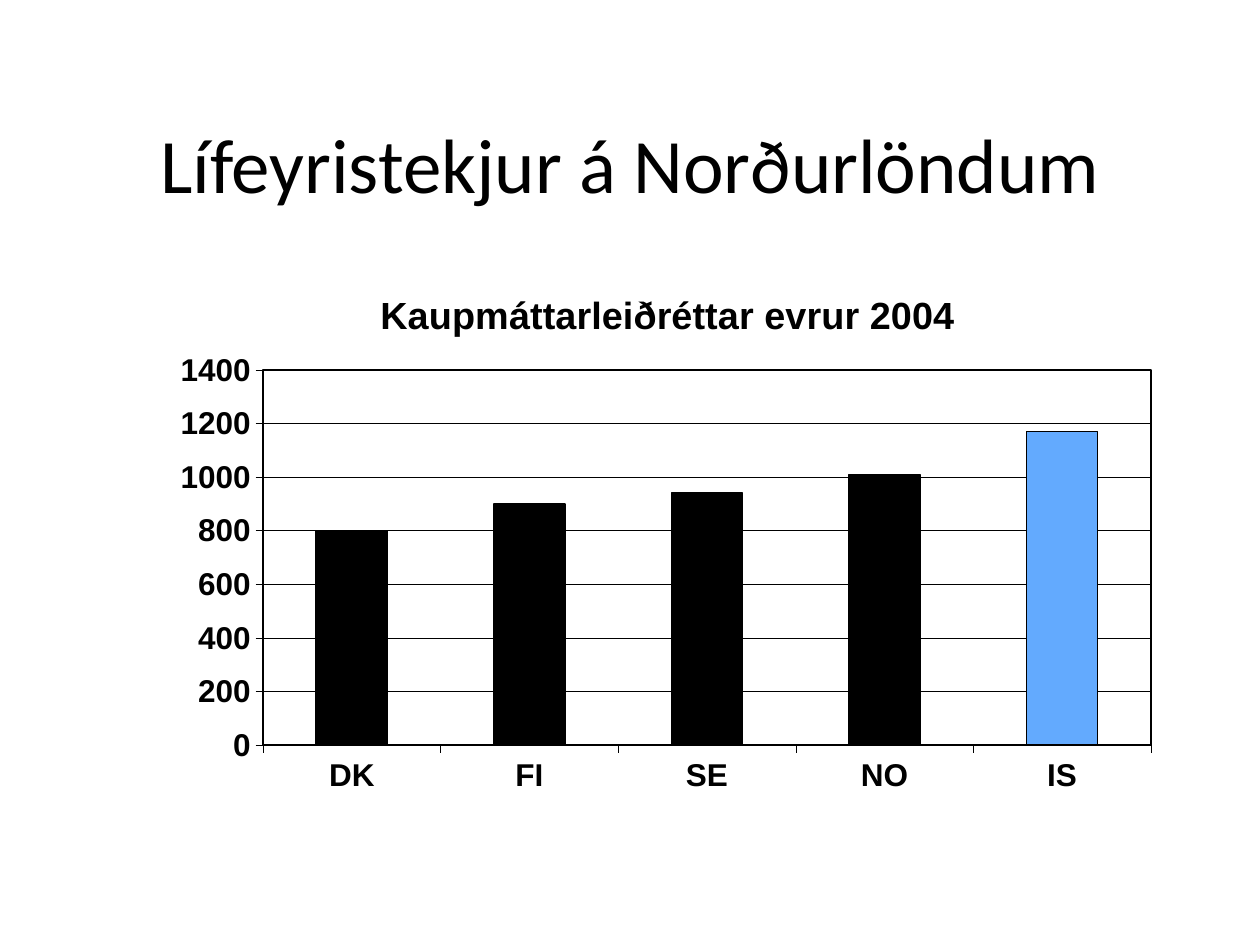
from dataclasses import dataclass

from lxml import etree
from pptx import Presentation
from pptx.chart.data import CategoryChartData
from pptx.dml.color import RGBColor
from pptx.enum.chart import XL_CHART_TYPE, XL_TICK_MARK
from pptx.enum.text import MSO_ANCHOR, PP_ALIGN
from pptx.oxml import parse_xml
from pptx.oxml.ns import nsdecls, qn
from pptx.util import Pt

COLUMN = XL_CHART_TYPE.COLUMN_CLUSTERED
OUTSIDE, NO_TICK = XL_TICK_MARK.OUTSIDE, XL_TICK_MARK.NONE
MIDDLE, CENTER = MSO_ANCHOR.MIDDLE, PP_ALIGN.CENTER
SCALE = 914400 / 126


@dataclass(frozen=True)
class Theme:
    """Colours, fonts and type sizes of the slide."""
    ink: str = "000000"
    highlight: str = "63AAFE"
    title_font: str = "Calibri"
    chart_font: str = "Arial"
    title_size: float = 44
    chart_title_size: float = 21.6
    chart_size: float = 18
    hairline: float = 0.25
    outline: float = 1


THEME = Theme()
HEADING = "Lífeyristekjur á Norðurlöndum"
MEASURE = "Kaupmáttarleiðréttar evrur 2004"
INCOMES = {"DK": 800, "FI": 900, "SE": 940, "NO": 1010, "IS": 1170}


def px(n):
    """Turn pixels into EMU."""
    return round(n * SCALE)


def style_font(font, name, size, bold):
    """Set typeface, size, weight and ink colour."""
    font.name, font.size, font.bold = name, Pt(size), bold
    font.color.rgb = RGBColor.from_string(THEME.ink)


def style_line(line, width):
    """Draw a line in the ink colour."""
    line.color.rgb = RGBColor.from_string(THEME.ink)
    line.width = Pt(width)


def fill_solid(fmt, color):
    """Fill a chart element with one colour."""
    fmt.fill.solid()
    fmt.fill.fore_color.rgb = RGBColor.from_string(color)


def set_layout(parent, inner=False, **places):
    """Place a chart part by fractions of the chart's size."""
    for old in parent.findall(qn("c:layout")):
        parent.remove(old)
    layout = parse_xml(f"<c:layout {nsdecls('c')}><c:manualLayout/></c:layout>")
    values = {"layoutTarget": "inner"} if inner else {}
    values.update(xMode="edge", yMode="edge", **places)
    for tag, value in values.items():
        etree.SubElement(layout[0], qn(f"c:{tag}")).set("val", str(value))
    tx = parent.find(qn("c:tx"))
    if tx is None:
        parent.insert(0, layout)
    else:
        tx.addnext(layout)


def outline_plot(plot_area):
    """Frame the plot area."""
    plot_area.append(parse_xml(
        f"<c:spPr {nsdecls('c', 'a')}><a:noFill/><a:ln w='{Pt(THEME.outline)}'>"
        f"<a:solidFill><a:srgbClr val='{THEME.ink}'/></a:solidFill></a:ln></c:spPr>"))


def add_heading(s, text):
    """Fill the title placeholder."""
    sp = s.shapes.title
    sp.left, sp.top, sp.width, sp.height = px(95), px(84), px(1071), px(158)
    tf = sp.text_frame
    tf.text = text
    tf.vertical_anchor = MIDDLE
    p = tf.paragraphs[0]
    p.alignment = CENTER
    style_font(p.runs[0].font, THEME.title_font, THEME.title_size, False)


def style_axis(axis):
    """Give an axis its text, line and ticks."""
    style_font(axis.tick_labels.font, THEME.chart_font, THEME.chart_size, True)
    style_line(axis.format.line, THEME.hairline)
    axis.major_tick_mark, axis.minor_tick_mark = OUTSIDE, NO_TICK


def style_columns(plot):
    """Colour the columns and highlight the last one."""
    plot.gap_width = 150
    plot.vary_by_categories = False
    series = plot.series[0]
    last = series.points[len(INCOMES) - 1]
    for fmt, color in ((series.format, THEME.ink), (last.format, THEME.highlight)):
        fill_solid(fmt, color)
        style_line(fmt.line, THEME.outline)


def add_income_chart(s):
    """Add the column chart of pension income."""
    data = CategoryChartData()
    data.categories = list(INCOMES)
    data.add_series(MEASURE, list(INCOMES.values()))
    chart = s.shapes.add_chart(
        COLUMN, px(95), px(273), px(1071), px(567), data).chart
    style_font(chart.font, THEME.chart_font, THEME.chart_size, True)
    chart.has_legend = False
    chart.has_title = True
    title = chart.chart_title
    title.text_frame.text = MEASURE
    r = title.text_frame.paragraphs[0].runs[0]
    style_font(r.font, THEME.chart_font, THEME.chart_title_size, True)
    title.include_in_layout = False
    for axis in (chart.category_axis, chart.value_axis):
        style_axis(axis)
    values = chart.value_axis
    values.minimum_scale, values.maximum_scale, values.major_unit = 0, 1400, 200
    values.has_major_gridlines = True
    style_line(values.major_gridlines.format.line, THEME.hairline)
    style_columns(chart.plots[0])
    body = chart.element.find(qn("c:chart"))
    set_layout(body.find(qn("c:title")), x=0.26, y=0.02)
    plot_area = body.find(qn("c:plotArea"))
    set_layout(plot_area, inner=True, x=0.157, y=0.171, w=0.829, h=0.662)
    outline_plot(plot_area)


def main():
    """Build and save the slide."""
    prs = Presentation()
    prs.slide_width, prs.slide_height = px(1260), px(945)
    s = prs.slides.add_slide(prs.slide_layouts[5])
    add_heading(s, HEADING)
    add_income_chart(s)
    prs.save("out.pptx")


if __name__ == "__main__":
    main()
